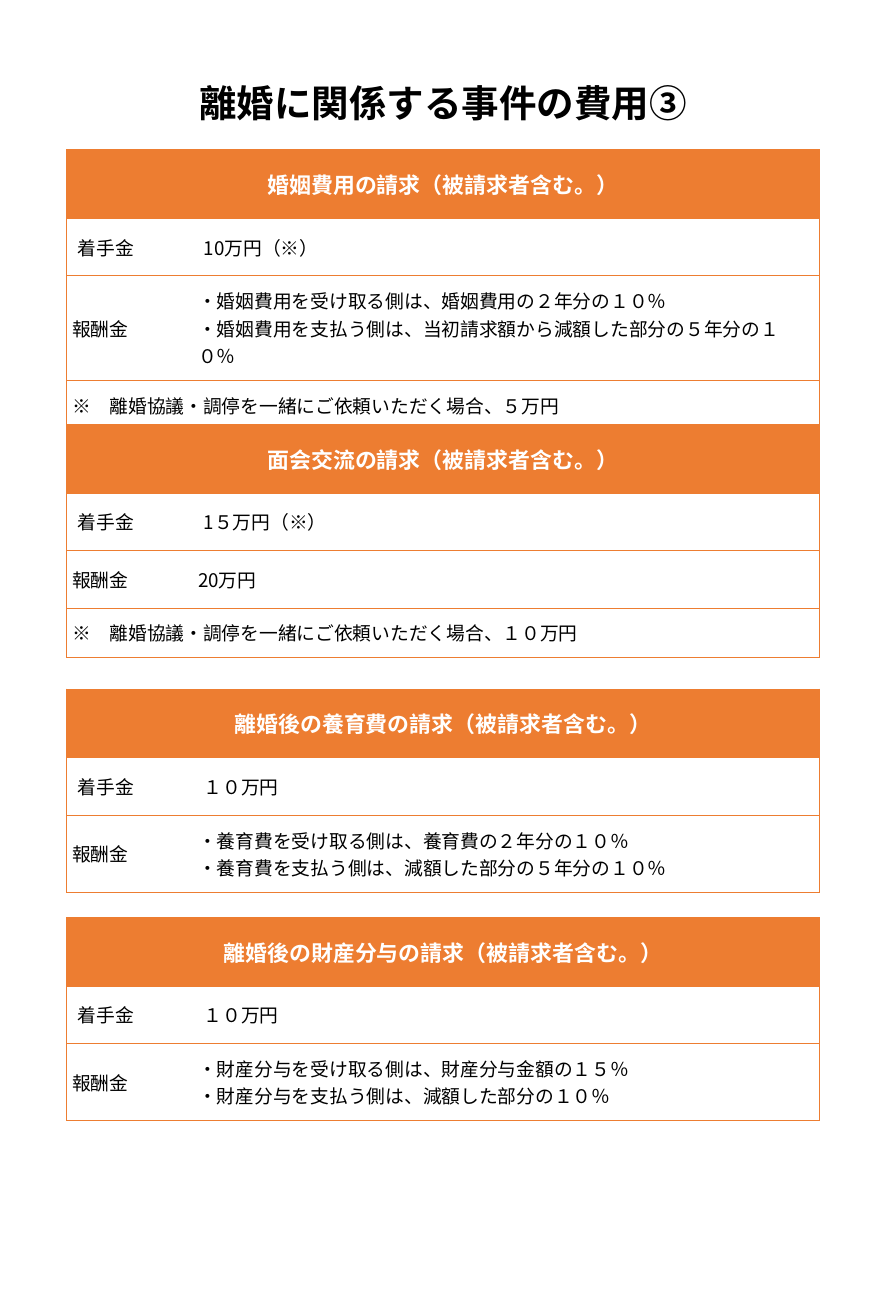
from lxml import etree
from pptx import Presentation
from pptx.dml.color import RGBColor
from pptx.enum import text
from pptx.oxml import ns
from pptx.util import Inches, Pt

ORANGE = RGBColor(0xED, 0x7D, 0x31)
WHITE = RGBColor(0xFF, 0xFF, 0xFF)
BLACK = RGBColor(0x00, 0x00, 0x00)
FONT = "Noto Sans CJK JP"
LEFT, WIDTH, LABEL_WIDTH = 0.59, 6.69, 1.12
ROW_HEIGHTS = [0.61, 0.51, 0.51, 0.39]

FEES = [
    (1.33, 2.14, "婚姻費用の請求（被請求者含む。）", "10万円（※）",
     "・婚姻費用を受け取る側は、婚姻費用の２年分の１０％\n"
     "・婚姻費用を支払う側は、当初請求額から減額した部分の５年分の１０％",
     "※　離婚協議・調停を一緒にご依頼いただく場合、５万円"),
    (3.77, 2.04, "面会交流の請求（被請求者含む。）", "1５万円（※）", "20万円",
     "※　離婚協議・調停を一緒にご依頼いただく場合、１０万円"),
    (6.12, 1.73, "離婚後の養育費の請求（被請求者含む。）", "１０万円",
     "・養育費を受け取る側は、養育費の２年分の１０％\n"
     "・養育費を支払う側は、減額した部分の５年分の１０％", None),
    (8.15, 1.73, "離婚後の財産分与の請求（被請求者含む。）", "１０万円",
     "・財産分与を受け取る側は、財産分与金額の１５％\n"
     "・財産分与を支払う側は、減額した部分の１０％", None),
]


def write(frame, words, size, color, bold, align):
    frame.text = words
    for para in frame.paragraphs:
        para.alignment = align
        for span in para.runs:
            span.font.size = Pt(size)
            span.font.bold = bold
            span.font.color.rgb = color
            span.font.name = FONT
            east_asian = etree.SubElement(span.font._element, ns.qn("a:ea"))
            east_asian.set("typeface", FONT)


def draw_borders(cell, hidden_sides):
    props = cell._tc.get_or_add_tcPr()
    for side in "LRTB":
        line = etree.SubElement(props, ns.qn(f"a:ln{side}"), w=str(Pt(0.5)))
        if side in hidden_sides:
            etree.SubElement(line, ns.qn("a:noFill"))
        else:
            fill = etree.SubElement(line, ns.qn("a:solidFill"))
            etree.SubElement(fill, ns.qn("a:srgbClr"), val=str(ORANGE))


deck = Presentation()
deck.slide_width = Inches(7.87)
deck.slide_height = Inches(11.69)
page = deck.slides.add_slide(deck.slide_layouts[5])

title = page.shapes.title
title.left, title.top = Inches(LEFT), Inches(0.66)
title.width, title.height = Inches(WIDTH), Inches(0.5)
title.text_frame.vertical_anchor = text.MSO_ANCHOR.MIDDLE
write(title.text_frame, "離婚に関係する事件の費用③", 24, BLACK, True, text.PP_ALIGN.CENTER)

for top, height, heading, retainer, reward, note in FEES:
    rows = [(heading, None), ("着手金", retainer), ("報酬金", reward)]
    if note:
        rows.append((note, None))
    holder = page.shapes.add_table(
        len(rows), 2, Inches(LEFT), Inches(top), Inches(WIDTH), Inches(height))
    table = holder.table
    table.first_row = table.horz_banding = False
    table.columns[0].width = Inches(LABEL_WIDTH)
    table.columns[1].width = Inches(WIDTH - LABEL_WIDTH)
    for row, entries in enumerate(rows):
        table.rows[row].height = Inches(ROW_HEIGHTS[row])
        merged = entries[1] is None
        if merged:
            table.cell(row, 0).merge(table.cell(row, 1))
        for column, words in enumerate(entries):
            cell = table.cell(row, column)
            draw_borders(cell, "" if merged else "RL"[column])
            if row == 0:
                cell.fill.solid()
                cell.fill.fore_color.rgb = ORANGE
            else:
                cell.fill.background()
            cell.vertical_anchor = text.MSO_ANCHOR.MIDDLE
            if row >= 2:
                cell.margin_left = cell.margin_right = Inches(0.05)
                cell.margin_top = cell.margin_bottom = Inches(0.1)
            if words and row == 0:
                write(cell.text_frame, words, 14, WHITE, True, text.PP_ALIGN.CENTER)
            elif words:
                write(cell.text_frame, words, 12, BLACK, False, text.PP_ALIGN.LEFT)
    holder.height = Inches(height)

deck.save("out.pptx")
